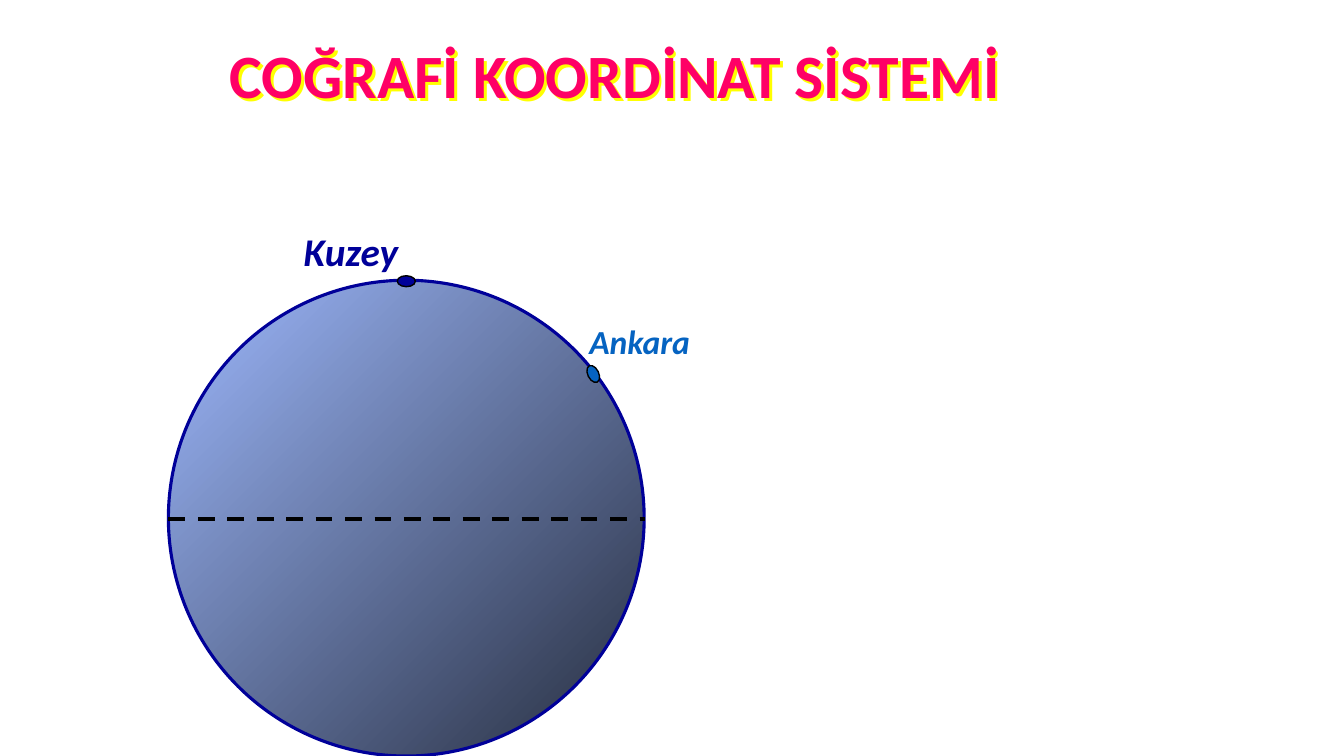
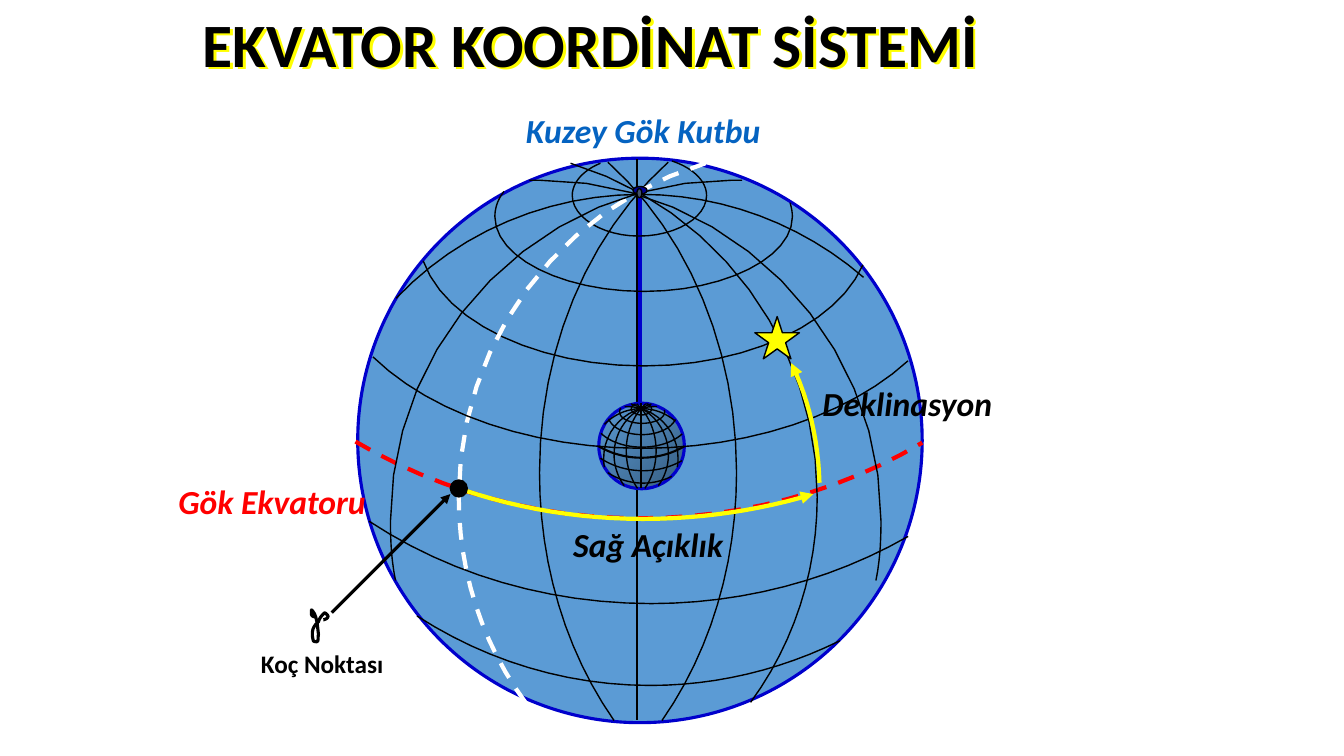
import dataclasses

import pptx
import pptx.dml.color
import pptx.enum.dml
import pptx.enum.shapes
import pptx.enum.text
import pptx.oxml
import pptx.oxml.ns
import pptx.util

WIDTH = pptx.util.Emu(12192000)
HEIGHT = pptx.util.Inches(7.5)
FONT = "Calibri"
TITLE_ONLY = 5
CURVE_STEPS = 12
COLOURS = {
    "black": "000000", "white": "FFFFFF", "navy": "000099", "rim": "0000CC",
    "sky": "5B9BD5", "sky_dark": "365C7F", "earth_light": "9EB9FE",
    "earth_dark": "262D3E", "place": "0563C1", "slate": "44546A",
    "red": "FF0000", "yellow": "FFFF00", "pink": "FF0066",
}
OVAL = pptx.enum.shapes.MSO_SHAPE.OVAL
STAR = pptx.enum.shapes.MSO_SHAPE.STAR_5_POINT
LEFT = pptx.enum.text.PP_ALIGN.LEFT
CENTER = pptx.enum.text.PP_ALIGN.CENTER


@dataclasses.dataclass
class Frame:
    """A square: left and size in percent of slide width, top in percent of height."""
    left: float
    top: float
    size: float

    def length(self, percent):
        return round(WIDTH * self.size * percent / 10000)

    def point(self, x, y):
        return (round(WIDTH * self.left / 100) + self.length(x),
                round(HEIGHT * self.top / 100) + self.length(y))


EARTH = Frame(12.53, 37.07, 35.4)
SKY = Frame(26.62, 20.93, 42)
INNER_EARTH = Frame(44.55, 53.33, 6.37)
ARIES_SIGN = Frame(23.1, 80.67, 2.48)

EQUATOR = [(-0.4, 50.2), (14.3, 58.9), (31.8, 63.8), (50, 63.8),
           (67.9, 63.8), (85.4, 59.1), (100, 50.4)]
FRONT_PARALLEL = [(2.7, 35.2), (13.2, 45.4), (31.3, 51.4), (50.5, 51.4),
                  (69.3, 51.4), (87, 45.5), (97.5, 35.9)]
PARALLELS = [
    [(25.9, 5.9), (24.8, 7.3), (24.3, 8.8), (24.3, 10.4), (24.3, 17.5),
     (36.1, 23.6), (50.7, 23.6), (65.2, 23.6), (77, 17.5), (77, 10.4),
     (77, 9.5), (76.8, 8.6), (76.6, 7.9)],
    [(43, 0.9), (40, 2.1), (38, 4.3), (38, 6.6), (38, 10.5), (43.4, 13.8),
     (49.8, 13.8), (56.4, 13.8), (61.8, 10.5), (61.8, 6.6), (61.8, 4.1),
     (59.5, 1.8), (55.7, 0.5)],
    [(11.6, 18.2), (15.5, 29.1), (31.8, 36.8), (50.7, 36.8), (69.1, 36.8),
     (85, 29.3), (89.5, 18.9)],
    [(2, 64.3), (16.4, 73.8), (33.9, 78.9), (52, 78.9), (68, 78.9),
     (83.9, 74.8), (97.5, 67)],
    [(10.5, 81.1), (22.9, 89.1), (37.1, 93.4), (51.8, 93.4), (63.4, 93.4),
     (74.8, 90.7), (85.4, 85.5)],
]
NEAR_MERIDIAN = [(44.3, 0.7), (58.8, 13.8), (67.1, 34.1), (67.1, 55.7),
                 (67.1, 71.8), (62.5, 87.3), (53.9, 99.6)]
MIDDLE_MERIDIAN = [(69.6, 96.4), (77.3, 85.9), (81.4, 73.2), (81.4, 60),
                   (81.4, 32.9), (63.8, 8.9), (37.7, 0.9)]
FAR_MERIDIAN = [(91.8, 74.8), (92.5, 71.4), (92.7, 67.9), (92.7, 64.3),
                (92.7, 31.1), (65.7, 3.9), (32.3, 3.9), (31.6, 3.9),
                (31.1, 3.9), (30.4, 3.9)]
BACK_MERIDIAN = [(6.8, 24.8), (18, 13), (33.8, 6.4), (50.2, 6.4),
                 (64.6, 6.4), (78.6, 11.6), (89.6, 21.1)]
RIGHT_ASCENSION = [(18.8, 58.8), (28.6, 62.1), (39.5, 63.9), (50.5, 63.9),
                   (61.1, 63.9), (71.4, 62.3), (80.7, 59.5)]
DECLINATION = [(81.8, 57.5), (81.6, 50.2), (80, 42.9), (76.8, 36.3)]
ARIES_STROKE = [
    (12, 21), (0, 18), (3, 12), (3, 0), (21, 15), (21, 55), (24, 73),
    (21, 91), (27, 100), (9, 94), (3, 73), (3, 52), (24, 36), (27, 24),
    (36, 15), (42, 9), (45, 9), (55, 18), (52, 21), (52, 27), (39, 30),
    (39, 30)]


def mirrored(curve, span=99.3):
    return [(span - x, y) for x, y in curve]


def rgb(colour):
    return pptx.dml.color.RGBColor.from_string(COLOURS[colour])


def style_line(shape, colour, points, dashed=False, arrow=False):
    shape.line.color.rgb = rgb(colour)
    shape.line.width = pptx.util.Pt(points)
    if dashed:
        shape.line.dash_style = pptx.enum.dml.MSO_LINE.DASH
    if arrow:
        outline = shape._element.spPr.find(pptx.oxml.ns.qn("a:ln"))
        outline.append(pptx.oxml.parse_xml(
            f'<a:tailEnd {pptx.oxml.ns.nsdecls("a")} type="triangle"/>'))


def add_effects(shape, content=""):
    shape._element.spPr.append(pptx.oxml.parse_xml(
        f'<a:effectLst {pptx.oxml.ns.nsdecls("a")}>{content}</a:effectLst>'))


def add_title(slide, text, colour, left, top):
    title = slide.shapes.title
    title.left, title.top = round(WIDTH * left / 100), round(HEIGHT * top / 100)
    title.width, title.height = round(WIDTH * 0.73), round(HEIGHT * 0.125)
    add_effects(title, '<a:outerShdw dist="35921" dir="2700000" algn="ctr">'
                       f'<a:srgbClr val="{COLOURS["yellow"]}"/></a:outerShdw>')
    frame = title.text_frame
    frame.auto_size = pptx.enum.text.MSO_AUTO_SIZE.NONE
    frame.vertical_anchor = pptx.enum.text.MSO_ANCHOR.MIDDLE
    frame.paragraphs[0].line_spacing = 0.9
    write(frame, text, 44, colour, LEFT)


def write(frame, text, size, colour, align, italic=False):
    paragraph = frame.paragraphs[0]
    paragraph.alignment = align
    run = paragraph.add_run()
    run.text = text
    run.font.name, run.font.size = FONT, pptx.util.Pt(size)
    run.font.bold, run.font.italic = True, italic
    run.font.color.rgb = rgb(colour)


def add_label(slide, text, colour, left, top, width, size=24, align=LEFT, italic=True):
    label = slide.shapes.add_textbox(
        round(WIDTH * left / 100), round(HEIGHT * top / 100),
        round(WIDTH * width / 100), pptx.util.Pt(size * 1.22 + 7.2))
    label.text_frame.word_wrap = True
    label.text_frame.auto_size = pptx.enum.text.MSO_AUTO_SIZE.SHAPE_TO_FIT_TEXT
    write(label.text_frame, text, size, colour, align, italic)


def add_mark(slide, frame, centre, size, fill, rim="black", rim_points=1,
             kind=OVAL, rotation=0):
    x, y = frame.point(*centre)
    width, height = (frame.length(side) for side in size)
    mark = slide.shapes.add_shape(kind, x - width // 2, y - height // 2, width, height)
    mark.shadow.inherit = False
    mark.rotation = rotation
    if isinstance(fill, tuple):
        mark.fill.gradient()
        mark.fill.gradient_angle = 315
        for stop, colour in zip(mark.fill.gradient_stops, fill):
            stop.color.rgb = rgb(colour)
    else:
        mark.fill.solid()
        mark.fill.fore_color.rgb = rgb(fill)
    style_line(mark, rim, rim_points)


def add_sphere(slide, frame, fill, rim):
    add_mark(slide, frame, (50, 50), (100, 100), fill, rim, 2.25)


def add_line(slide, frame, start, end, colour, points, **look):
    line = slide.shapes.add_connector(
        pptx.enum.shapes.MSO_CONNECTOR.STRAIGHT, *frame.point(*start), *frame.point(*end))
    style_line(line, colour, points, **look)
    add_effects(line)


def bezier_points(curve):
    for first in range(0, len(curve) - 1, 3):
        corners = curve[first:first + 4]
        for step in range(1, CURVE_STEPS + 1):
            t = step / CURVE_STEPS
            weights = ((1 - t) ** 3, 3 * t * (1 - t) ** 2, 3 * t * t * (1 - t), t ** 3)
            yield tuple(sum(w * corner[axis] for w, corner in zip(weights, corners))
                        for axis in (0, 1))


def add_curve(slide, frame, curve, colour="black", points=1, **look):
    builder = slide.shapes.build_freeform(*frame.point(*curve[0]))
    builder.add_line_segments([frame.point(*spot) for spot in bezier_points(curve)],
                              close=False)
    arc = builder.convert_to_shape()
    arc.shadow.inherit = False
    arc.fill.background()
    style_line(arc, colour, points, **look)


def add_graticule(slide, frame, equator_look, origin_meridian_look):
    add_curve(slide, frame, EQUATOR, **equator_look)
    for parallel in PARALLELS:
        add_curve(slide, frame, parallel)
    add_line(slide, frame, (49.5, 0.2), (49.5, 99.6), "black", 1)
    for meridian in (NEAR_MERIDIAN, mirrored(NEAR_MERIDIAN), MIDDLE_MERIDIAN):
        add_curve(slide, frame, meridian)
    add_curve(slide, frame, mirrored(MIDDLE_MERIDIAN), **origin_meridian_look)
    for meridian in (FAR_MERIDIAN, mirrored(FAR_MERIDIAN, 98.5), BACK_MERIDIAN):
        add_curve(slide, frame, meridian)


def build_geographic(slide):
    add_title(slide, "COĞRAFİ KOORDİNAT SİSTEMİ", "pink", 16.35, 4.13)
    add_sphere(slide, EARTH, ("earth_light", "earth_dark"), "navy")
    add_mark(slide, EARTH, (89.3, 19.7), (2.3, 3.8), "place", rotation=333.8)
    add_mark(slide, EARTH, (50, 0.2), (2.3, 3.8), "navy", rotation=270.6)
    add_line(slide, EARTH, (0, 50.2), (100.2, 50.2), "black", 3, dashed=True)
    add_label(slide, "Ankara", "place", 35.63, 41.73, 23.93, align=CENTER)
    add_label(slide, "Kuzey", "navy", 20.33, 29.47, 11.55, size=28, align=CENTER)


def build_equatorial(slide):
    add_title(slide, "EKVATOR KOORDİNAT SİSTEMİ", "black", 14.33, 0)
    add_sphere(slide, SKY, "sky", "rim")
    add_line(slide, SKY, (50, 45.5), (50, 6.2), "rim", 3)
    add_graticule(slide, SKY, dict(colour="red", points=3, dashed=True),
                  dict(colour="white", points=3, dashed=True))
    add_sphere(slide, INNER_EARTH, ("sky", "sky_dark"), "rim")
    add_graticule(slide, INNER_EARTH, dict(points=1.5), {})
    for globe in (INNER_EARTH, SKY):
        add_curve(slide, globe, FRONT_PARALLEL)

    add_mark(slide, SKY, (50, 5.7), (2.5, 1.4), "navy")
    add_mark(slide, SKY, (49.9, 6.2), (0.9, 1.6), "slate")
    for measure in (RIGHT_ASCENSION, DECLINATION):
        add_curve(slide, SKY, measure, "yellow", 3, arrow=True)
    add_mark(slide, SKY, (74.3, 31.8), (7.9, 7.5), "yellow", kind=STAR)
    add_mark(slide, SKY, (17.9, 58.5), (3, 3), "black")
    add_line(slide, SKY, (-4.6, 80.5), (16.4, 59.5), "black", 2.25, arrow=True)
    add_curve(slide, ARIES_SIGN, ARIES_STROKE, points=2.25)

    add_label(slide, "Deklinasyon", "black", 60.45, 50, 23.63)
    add_label(slide, "Sağ Açıklık", "black", 33.9, 68.67, 28.65, align=CENTER)
    add_label(slide, "Gök Ekvatoru", "red", 12.53, 62.93, 33.68)
    add_label(slide, "Koç Noktası", "black", 18.68, 85.07, 12.53, size=18, italic=False)
    add_label(slide, "Kuzey Gök Kutbu", "place", 38.4, 13.87, 33.68)


def main():
    deck = pptx.Presentation()
    deck.slide_width, deck.slide_height = WIDTH, HEIGHT
    for build in (build_geographic, build_equatorial):
        build(deck.slides.add_slide(deck.slide_layouts[TITLE_ONLY]))
    deck.save("out.pptx")


if __name__ == "__main__":
    main()
